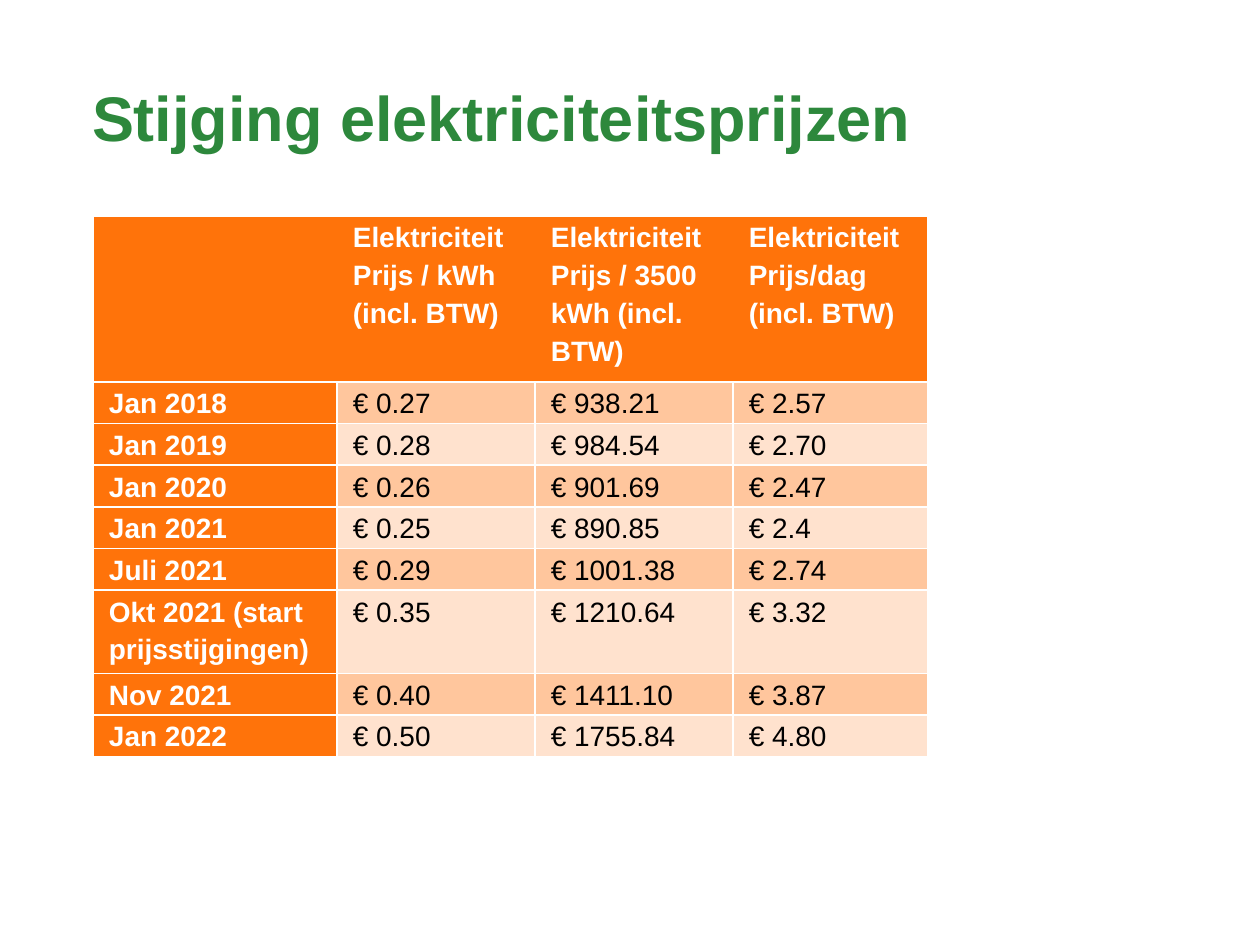
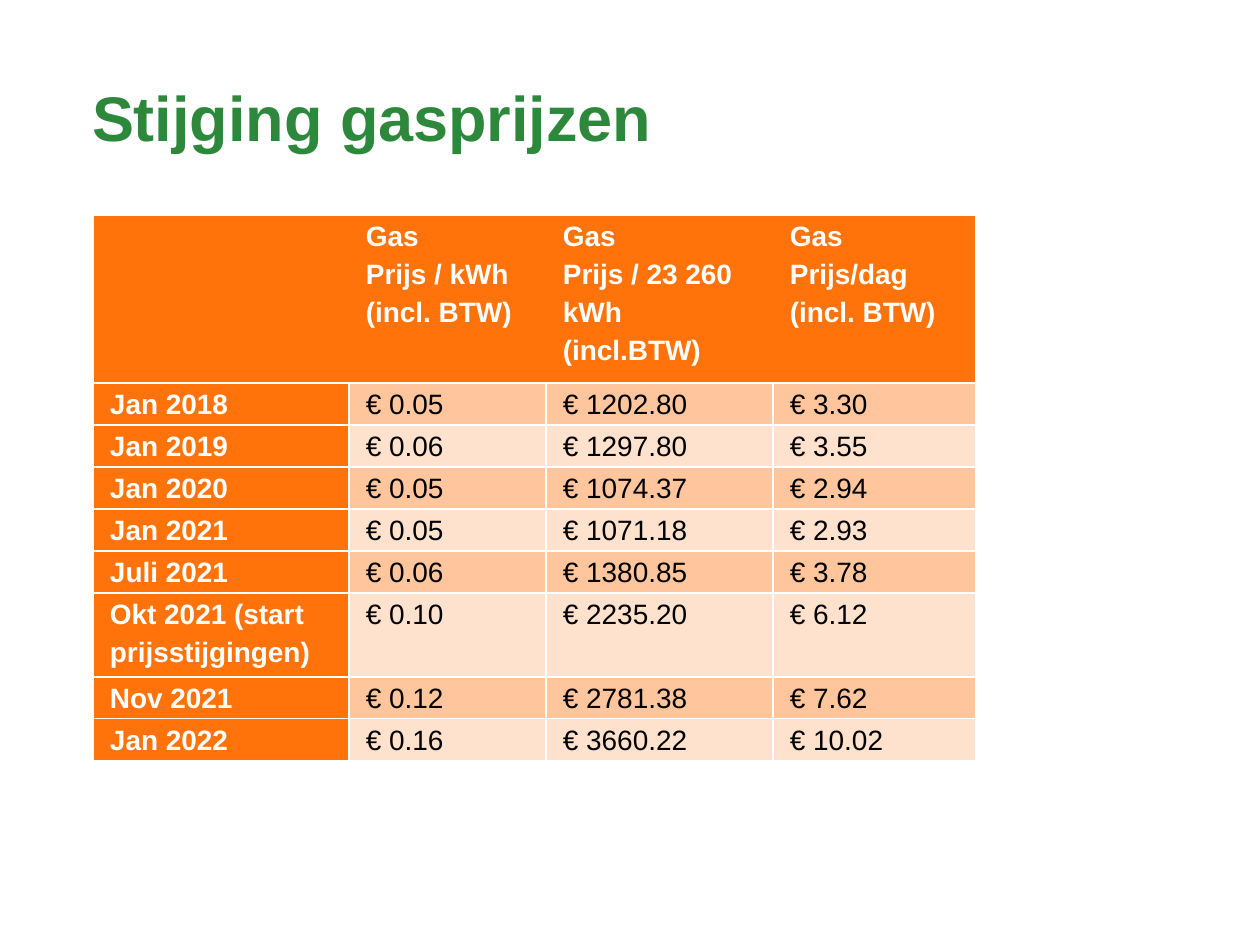
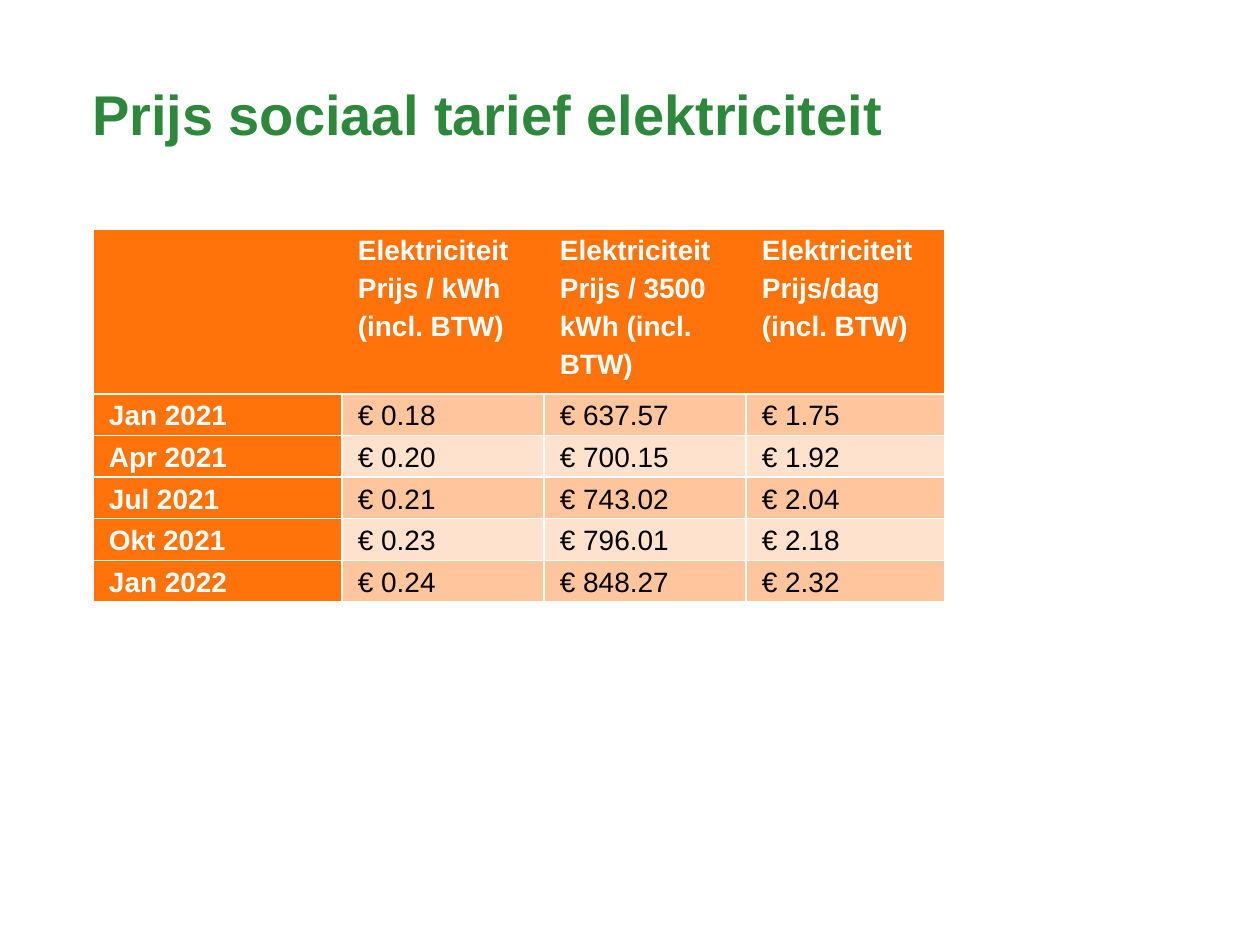
import pptx
import pptx.dml.color
import pptx.enum.text
import pptx.oxml
import pptx.oxml.ns
import pptx.util

PIXELS_PER_INCH = 126
FONT = "Arial"
GREEN = "2D883C"
ORANGE = "FF730A"
BANDS = ("FFC69D", "FFE2CE")
WHITE = "FFFFFF"
BLACK = "000000"
LEFT = 93

# Prices: per kWh, per year's consumption, per day
ELECTRICITY_HEADERS = (
    "",
    "Elektriciteit\nPrijs / kWh (incl. BTW)",
    "Elektriciteit\nPrijs / 3500 kWh (incl. BTW)",
    "Elektriciteit\nPrijs/dag (incl. BTW)",
)
GAS_HEADERS = (
    "",
    "Gas\nPrijs / kWh (incl. BTW)",
    "Gas\nPrijs / 23 260 kWh (incl.BTW)",
    "Gas\nPrijs/dag\n(incl. BTW)",
)
PRICE_RISE_START = "Okt 2021 (start prijsstijgingen)"
ELECTRICITY_PRICES = (
    ("Jan 2018", "0.27", "938.21", "2.57"),
    ("Jan 2019", "0.28", "984.54", "2.70"),
    ("Jan 2020", "0.26", "901.69", "2.47"),
    ("Jan 2021", "0.25", "890.85", "2.4"),
    ("Juli 2021", "0.29", "1001.38", "2.74"),
    (PRICE_RISE_START, "0.35", "1210.64", "3.32"),
    ("Nov 2021", "0.40", "1411.10", "3.87"),
    ("Jan 2022", "0.50", "1755.84", "4.80"),
)
GAS_PRICES = (
    ("Jan 2018", "0.05", "1202.80", "3.30"),
    ("Jan 2019", "0.06", "1297.80", "3.55"),
    ("Jan 2020", "0.05", "1074.37", "2.94"),
    ("Jan 2021", "0.05", "1071.18", "2.93"),
    ("Juli 2021", "0.06", "1380.85", "3.78"),
    (PRICE_RISE_START, "0.10", "2235.20", "6.12"),
    ("Nov 2021", "0.12", "2781.38", "7.62"),
    ("Jan 2022", "0.16", "3660.22", "10.02"),
)
SOCIAL_TARIFF_PRICES = (
    ("Jan 2021", "0.18", "637.57", "1.75"),
    ("Apr 2021", "0.20", "700.15", "1.92"),
    ("Jul 2021", "0.21", "743.02", "2.04"),
    ("Okt 2021", "0.23", "796.01", "2.18"),
    ("Jan 2022", "0.24", "848.27", "2.32"),
)


def px(length):
    return pptx.util.Emu(round(length * 914400 / PIXELS_PER_INCH))


def rgb(color):
    return pptx.dml.color.RGBColor.from_string(color)


def write_text(text_frame, text, *, size, color, bold, line_spacing):
    """Write one paragraph for each line of text."""
    for index, line in enumerate(text.split("\n")):
        paragraph = text_frame.add_paragraph() if index else text_frame.paragraphs[0]
        paragraph.alignment = pptx.enum.text.PP_ALIGN.LEFT
        paragraph.line_spacing = line_spacing
        run = paragraph.add_run()
        run.text = line
        run.font.name = FONT
        run.font.size = pptx.util.Pt(size)
        run.font.bold = bold
        run.font.color.rgb = rgb(color)


def add_title(slide, text, size):
    title = slide.shapes.title
    title.left, title.top, title.width, title.height = px(92), px(89), px(853), px(139)
    frame = title.text_frame
    frame.margin_left = frame.margin_right = frame.margin_top = frame.margin_bottom = 0
    frame.vertical_anchor = pptx.enum.text.MSO_ANCHOR.TOP
    frame.auto_size = pptx.enum.text.MSO_AUTO_SIZE.NONE
    frame.word_wrap = True
    write_text(frame, text, size=size, color=GREEN, bold=True, line_spacing=0.86)


def set_borders(cell, visible_sides):
    """Draw white lines on the visible sides and none on the others."""
    properties = cell._tc.get_or_add_tcPr()
    namespace = pptx.oxml.ns.nsdecls("a")
    for side in "LRTB":
        paint = "<a:noFill/>"
        if side in visible_sides:
            paint = f'<a:solidFill><a:srgbClr val="{WHITE}"/></a:solidFill>'
        properties.append(pptx.oxml.parse_xml(
            f'<a:ln{side} {namespace} w="{pptx.util.Pt(1)}">{paint}</a:ln{side}>'))


def format_cell(cell, text, *, fill, color, bold, borders, inset):
    set_borders(cell, borders)
    cell.fill.solid()
    cell.fill.fore_color.rgb = rgb(fill)
    cell.margin_left = cell.margin_right = px(inset)
    cell.margin_top = cell.margin_bottom = 0
    if text:
        write_text(cell.text_frame, text, size=16, color=color, bold=bold, line_spacing=1.22)


def add_price_table(slide, headers, prices, *, top, widths, header_height, body_height, inset):
    table_shape = slide.shapes.add_table(
        len(prices) + 1, len(headers), px(LEFT), px(top),
        px(sum(widths)), px(header_height + body_height))
    table = table_shape.table
    table.first_row = table.horz_banding = False
    for column, width in zip(table.columns, widths):
        column.width = px(width)

    # The body height is shared by text lines; the price rise label takes two
    line_counts = [2 if row[0] == PRICE_RISE_START else 1 for row in prices]
    table.rows[0].height = px(header_height)
    for index, count in enumerate(line_counts, 1):
        table.rows[index].height = px(body_height * count / sum(line_counts))

    # Header row: outer lines only
    last = len(headers) - 1
    for index, text in enumerate(headers):
        borders = "TB" + {0: "L", last: "R"}.get(index, "")
        format_cell(table.cell(0, index), text, fill=ORANGE, color=WHITE, bold=True,
                    borders=borders, inset=inset)

    # Month labels and banded prices
    for row_index, (month, *amounts) in enumerate(prices, 1):
        format_cell(table.cell(row_index, 0), month, fill=ORANGE, color=WHITE, bold=True,
                    borders="LRTB", inset=inset)
        for column_index, amount in enumerate(amounts, 1):
            format_cell(table.cell(row_index, column_index), f"€ {amount}",
                        fill=BANDS[(row_index - 1) % 2], color=BLACK, bold=False,
                        borders="LRTB", inset=inset)


def add_price_slide(presentation, title, headers, prices, *, title_size=36, **layout):
    slide = presentation.slides.add_slide(presentation.slide_layouts[5])
    add_title(slide, title, title_size)
    add_price_table(slide, headers, prices, **layout)


def main():
    presentation = pptx.Presentation()
    presentation.slide_width = px(1260)
    presentation.slide_height = px(945)

    add_price_slide(presentation, "Stijging elektriciteitsprijzen",
                    ELECTRICITY_HEADERS, ELECTRICITY_PRICES,
                    top=216, widths=(244, 198, 198, 195),
                    header_height=166, body_height=375, inset=16)
    add_price_slide(presentation, "Stijging gasprijzen", GAS_HEADERS, GAS_PRICES,
                    top=215, widths=(256, 197, 227, 203),
                    header_height=168, body_height=378, inset=17)
    add_price_slide(presentation, "Prijs sociaal tarief elektriciteit",
                    ELECTRICITY_HEADERS, SOCIAL_TARIFF_PRICES, title_size=32,
                    top=229, widths=(249, 202, 202, 199),
                    header_height=165, body_height=208, inset=16)

    presentation.save("out.pptx")


if __name__ == "__main__":
    main()
